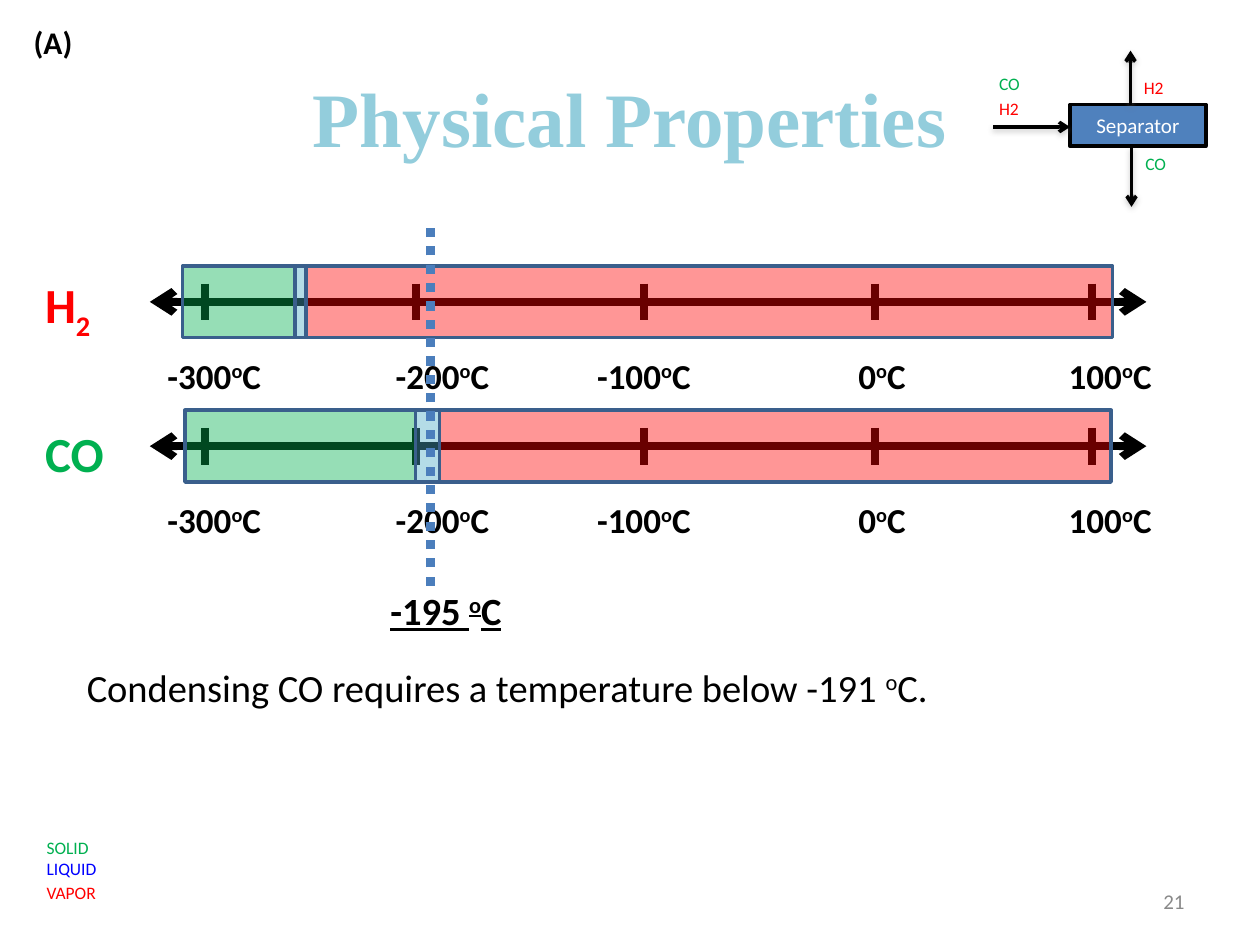
from dataclasses import dataclass

from lxml import etree
from pptx import Presentation
from pptx import util as u
from pptx.dml.color import RGBColor
from pptx.enum import dml, shapes, text
from pptx.oxml.ns import qn


@dataclass(frozen=True)
class Theme:
    heading_font: str = "Times New Roman"
    body_font: str = "Calibri"
    heading: str = "93CDDC"
    ink: str = "000000"
    paper: str = "FFFFFF"
    muted: str = "898989"
    solid: str = "00B050"
    liquid: str = "4BACC6"
    liquid_text: str = "0000FF"
    vapor: str = "FF0000"
    band_edge: str = "3A5F8C"
    marker: str = "4B7EBC"
    unit: str = "4F81BD"
    shadow: str = "808080"
    title_size: int = 44
    name_size: int = 28
    body_size: int = 22
    scale_size: int = 20
    panel_size: int = 18
    unit_size: int = 12
    small_size: int = 10


THEME = Theme()
LEFT, CENTER, RIGHT = text.PP_ALIGN.LEFT, text.PP_ALIGN.CENTER, text.PP_ALIGN.RIGHT
TOP, MIDDLE = text.MSO_ANCHOR.TOP, text.MSO_ANCHOR.MIDDLE


def cm(*lengths):
    return [u.Cm(length) for length in lengths]


def rgb(color):
    return RGBColor.from_string(color)


def degrees(value):
    """Runs of (words, baseline percent) for a Celsius temperature."""
    return [(value, 0), ("o", 30), ("C", 0)]


def style(paragraph, size, color, bold=False, align=LEFT, font=THEME.body_font):
    paragraph.alignment = align
    paragraph.font.name = font
    paragraph.font.size = u.Pt(size)
    paragraph.font.bold = bold
    paragraph.font.color.rgb = rgb(color)


def add_text(slide, box, runs, size, color=THEME.ink, bold=False,
             align=LEFT, anchor=TOP):
    frame = slide.shapes.add_textbox(*cm(*box)).text_frame
    frame.word_wrap = True
    frame.vertical_anchor = anchor
    add_runs(frame.paragraphs[0], runs, size, color, bold, align)
    return frame


def add_runs(paragraph, runs, size, color, bold=False, align=LEFT):
    style(paragraph, size, color, bold, align)
    for words, baseline in runs:
        run = paragraph.add_run()
        run.text = words
        if baseline:
            run._r.get_or_add_rPr().set("baseline", str(baseline * 1000))


def add_line(slide, start, end, width, color=THEME.ink, ends=(), shadow=False):
    """Draw a line; ends names the arrowheads, headEnd at start, tailEnd at end."""
    line = slide.shapes.add_connector(
        shapes.MSO_CONNECTOR.STRAIGHT, *cm(*start), *cm(*end))
    line.line.width = u.Pt(width)
    line.line.color.rgb = rgb(color)
    outline = line.line._get_or_add_ln()
    for end_name in ends:
        etree.SubElement(outline, qn("a:" + end_name), type="arrow")
    effects = etree.SubElement(line._element.spPr, qn("a:effectLst"))
    if shadow:
        cast = etree.SubElement(
            effects, qn("a:outerShdw"), blurRad=str(u.Pt(3.1)),
            dist=str(u.Pt(1.6)), dir="5400000", rotWithShape="0")
        tint = etree.SubElement(cast, qn("a:srgbClr"), val=THEME.shadow)
        etree.SubElement(tint, qn("a:alpha"), val="38000")
    return line


def add_rect(slide, box, fill, edge, opacity=100):
    rect = slide.shapes.add_shape(shapes.MSO_SHAPE.RECTANGLE, *cm(*box))
    rect.shadow.inherit = False
    rect.fill.solid()
    rect.fill.fore_color.rgb = rgb(fill)
    rect.line.color.rgb = rgb(edge)
    rect.line.width = u.Pt(2)
    if opacity < 100:
        tint = rect._element.spPr.find(qn("a:solidFill")).find(qn("a:srgbClr"))
        etree.SubElement(tint, qn("a:alpha"), val=str(opacity * 1000))
    return rect


def add_title(slide, box, words):
    title = slide.shapes.title
    title.left, title.top, title.width, title.height = cm(*box)
    title.text_frame.text = words
    title.text_frame.vertical_anchor = MIDDLE
    style(title.text_frame.paragraphs[0], THEME.title_size, THEME.heading,
          True, CENTER, THEME.heading_font)


def add_phase_scale(slide, box, name, color, bounds):
    """Temperature axis with solid, liquid and vapor bands between the bounds."""
    left, top, width, height = box
    axis_y = top + height / 2
    add_line(slide, (left, axis_y), (left + width, axis_y), 4.5,
             ends=("headEnd", "tailEnd"))
    scale = [("-300", 1.12, 1.3), ("-200", 5.36, 5.9), ("-100", 9.96, 9.96),
             ("0", 14.61, 14.76), ("100", 19, 19.36)]
    for value, tick, label in scale:
        add_line(slide, (left + tick, axis_y - 0.37),
                 (left + tick, axis_y + 0.37), 4.5)
        add_text(slide, (left + label - 1.65, axis_y + 0.79, 3.3, 1.37),
                 degrees(value), THEME.scale_size, bold=True,
                 align=CENTER, anchor=MIDDLE)
    add_text(slide, (0.66, top + 0.13, 2, height), name, THEME.name_size,
             color, bold=True, anchor=MIDDLE)
    phases = (THEME.solid, THEME.liquid, THEME.vapor)
    for phase, start, end in zip(phases, bounds, bounds[1:]):
        add_rect(slide, (left + start, top, end - start, height),
                 phase, THEME.band_edge, opacity=41)


def add_operating_point(slide, box):
    left, top, width, height = box
    marker_x = left + 1.06
    marker = add_line(slide, (marker_x, top + height), (marker_x, top), 5.25,
                      THEME.marker)
    marker.line.dash_style = dml.MSO_LINE.ROUND_DOT
    label = add_text(slide, (left, top + height - 0.1, width, 1.19),
                     degrees("-195 "), THEME.body_size, bold=True)
    label.paragraphs[0].font.underline = True


def add_separator(slide, box):
    left, top, width, height = box
    unit = add_rect(slide, (left + 1.68, top + 1.12, width - 1.68, 0.84),
                    THEME.unit, THEME.ink)
    unit.text_frame.vertical_anchor = MIDDLE
    add_runs(unit.text_frame.paragraphs[0], [("Separator", 0)],
             THEME.unit_size, THEME.paper, align=CENTER)
    streams = [((2.92, 1.97), (2.92, height)), ((2.9, 1.12), (2.9, 0.03)),
               ((0.13, 1.57), (1.68, 1.57))]
    for start, end in streams:
        add_line(slide, (left + start[0], top + start[1]),
                 (left + end[0], top + end[1]), 2, ends=("tailEnd",), shadow=True)
    add_key(slide, (left + 2.95, top + 1.98, 1.3, 0.68), [("CO", THEME.solid, 0)])
    add_key(slide, (left + 2.92, top + 0.43, 1.47, 0.68), [("H2", THEME.vapor, 0)])
    add_key(slide, (left, top + 0.36, 1.93, 1.63),
            [("CO", THEME.solid, 0), ("H2", THEME.vapor, 2)])


def add_key(slide, box, entries):
    """Small coloured lines of (words, color, points of space before)."""
    frame = slide.shapes.add_textbox(*cm(*box)).text_frame
    frame.word_wrap = True
    for index, (words, color, gap) in enumerate(entries):
        entry = frame.add_paragraph() if index else frame.paragraphs[0]
        add_runs(entry, [(words, 0)], THEME.small_size, color)
        entry.space_before = u.Pt(gap)


def main():
    deck = Presentation()
    deck.slide_width, deck.slide_height = cm(25.4, 19.05)
    slide = deck.slides.add_slide(deck.slide_layouts[5])

    add_title(slide, (1.27, 0.76, 22.86, 3.18), "Physical Properties")
    add_phase_scale(slide, (3.02, 5.36, 20.09, 1.45), [("H", 0), ("2", -25)],
                    THEME.vapor, (0.66, 2.93, 3.15, 19.41))
    add_phase_scale(slide, (3.02, 8.27, 20.09, 1.45), [("CO", 0)],
                    THEME.solid, (0.71, 5.36, 5.84, 19.38))
    add_operating_point(slide, (7.62, 4.45, 2.97, 7.36))
    add_text(slide, (1.5, 13.26, 21.92, 1.19),
             [("Condensing CO requires a temperature below -191 ", 0),
              ("o", 30), ("C.", 0)], THEME.body_size)
    add_key(slide, (0.69, 16.74, 2.97, 1.63),
            [("SOLID", THEME.solid, 0), ("LIQUID", THEME.liquid_text, 0),
             ("VAPOR", THEME.vapor, 2)])
    add_separator(slide, (19.89, 0.99, 4.42, 3.18))
    add_text(slide, (18.21, 17.65, 5.92, 1.02), [("21", 0)], THEME.unit_size,
             THEME.muted, align=RIGHT, anchor=MIDDLE)
    add_text(slide, (0.43, 0.33, 1.47, 1.02), [("(A)", 0)],
             THEME.panel_size, bold=True)
    deck.save("out.pptx")


if __name__ == "__main__":
    main()
